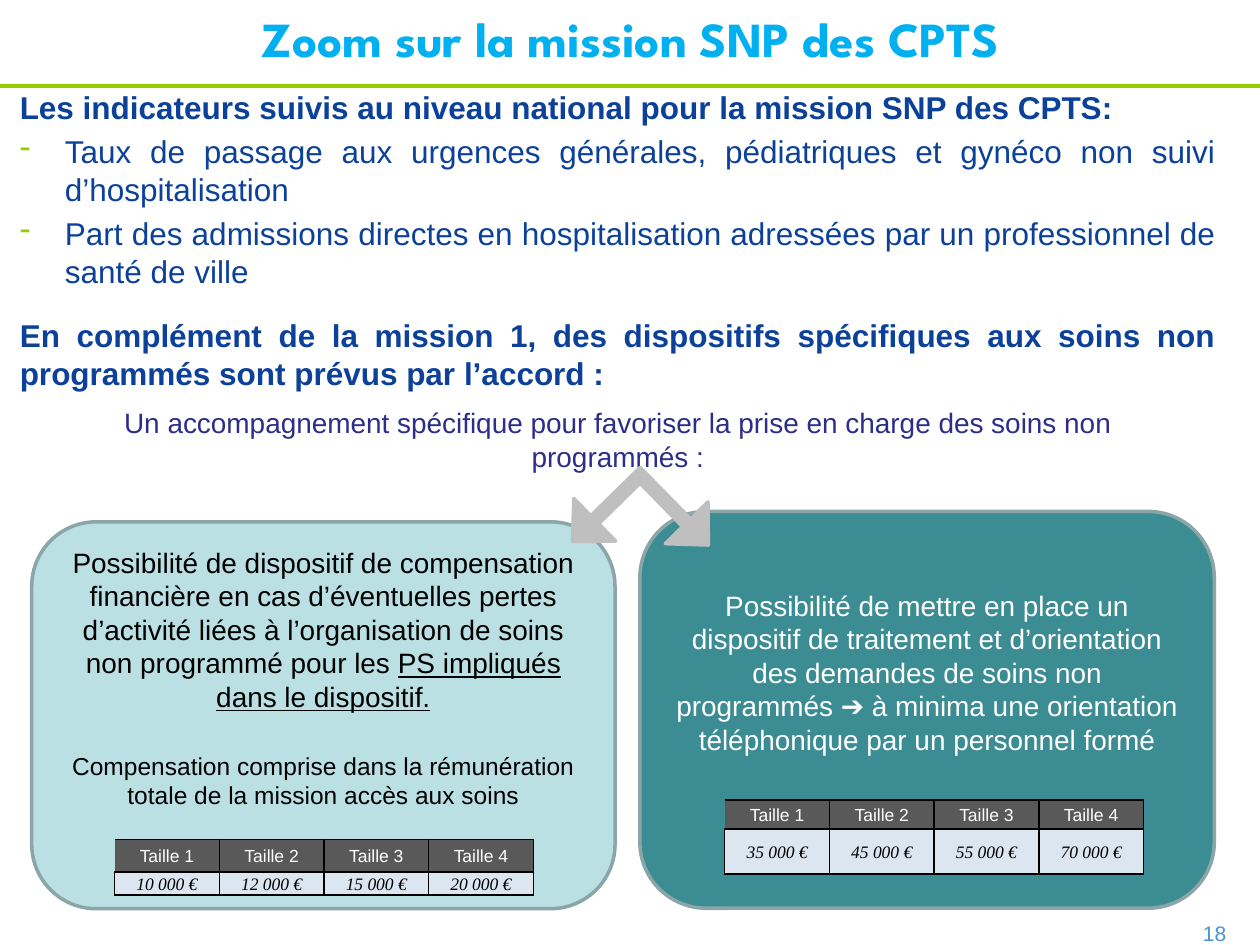
from lxml.etree import SubElement
from pptx import Presentation
from pptx.dml.color import RGBColor
from pptx.enum.shapes import MSO_CONNECTOR, MSO_SHAPE
from pptx.enum.text import MSO_ANCHOR, PP_ALIGN
from pptx.oxml.ns import qn
from pptx.util import Cm, Pt

NAVY, GREEN, GREY_EDGE = "0C419A", "99CC00", "8AA6A8"
CENTER, JUSTIFY = PP_ALIGN.CENTER, PP_ALIGN.JUSTIFY

TITLE = [dict(runs=["Zoom sur la mission SNP des CPTS"], size=28,
              font="League Spartan", color="00B0F0", bold=True)]
INDICATORS = [
    dict(runs=["Les indicateurs suivis au niveau national pour la mission SNP des CPTS:"],
         bold=True),
    dict(runs=["Taux de passage aux urgences générales, pédiatriques et gynéco non suivi "
               "d’hospitalisation"], bullet="-", before=3.6),
    dict(runs=["Part des admissions directes en hospitalisation adressées par un "
               "professionnel de santé de ville"], bullet="-", before=3.6),
    dict(runs=["En complément de la mission 1, des dispositifs spécifiques aux soins non "
               "programmés sont prévus par l’accord :"], bold=True, before=15),
]
for item in INDICATORS:
    item.update(size=18, color=NAVY, align=JUSTIFY)

SUPPORT = [dict(runs=["Un accompagnement spécifique pour favoriser la prise en charge des "
                      "soins non programmés :"], color="2D2D8A")]
COMPENSATION = [
    dict(runs=["Possibilité de dispositif de compensation financière en cas d’éventuelles "
               "pertes d’activité liées à l’organisation de soins non programmé pour les ",
               ("PS impliqués dans le dispositif.",)]),
    dict(runs=["Compensation comprise dans la rémunération totale de la mission accès aux "
               "soins"], size=14, before=21.6),
]
ORIENTATION = [dict(runs=["Possibilité de mettre en place un dispositif de traitement et "
                          "d’orientation des demandes de soins non programmés ➔ à minima une "
                          "orientation téléphonique par un personnel formé"], color="FFFFFF")]

# position, fill, outline, shape, anchor, bottom inset, paragraphs
PANELS = [
    ((1.75, 8.05, 21.41, 2.49), "FFFFFF", "FFFFFF", MSO_SHAPE.RECTANGLE,
     MSO_ANCHOR.TOP, 0.13, SUPPORT),
    ((0.64, 10.52, 11.76, 7.8), "BBE0E3", GREY_EDGE, MSO_SHAPE.ROUNDED_RECTANGLE,
     MSO_ANCHOR.MIDDLE, 1.65, COMPENSATION),
    ((12.9, 10.31, 11.58, 8), "3C8C93", GREY_EDGE, MSO_SHAPE.ROUNDED_RECTANGLE,
     MSO_ANCHOR.MIDDLE, 1.65, ORIENTATION),
]
SIZES = ["Taille 1", "Taille 2", "Taille 3", "Taille 4"]
# left, top, row heights, amounts
TABLES = [
    (14.61, 16.13, (0.58, 0.91), ["35 000 €", "45 000 €", "55 000 €", "70 000 €"]),
    (2.31, 16.92, (0.66, 0.46), ["10 000 €", "12 000 €", "15 000 €", "20 000 €"]),
]
COLUMN = 2.11
ROW_STYLES = [
    dict(fill="595959", color="FFFFFF", font="Arial", italic=False),
    dict(fill="DCE6F1", color="000000", font="Times New Roman", italic=True),
]


def rgb(value):
    return RGBColor.from_string(value)


def box(values):
    return [Cm(v) for v in values]


def style(font, size, color, **formats):
    font.size, font.color.rgb = Pt(size), rgb(color)
    for key, value in formats.items():
        setattr(font, key, value)


def add_bullet(p, char):
    pPr = p._p.get_or_add_pPr()
    pPr.set("marL", str(Cm(0.91)))
    pPr.set("indent", str(-Cm(0.91)))
    color = SubElement(pPr, qn("a:buClr"))
    SubElement(color, qn("a:srgbClr"), val=GREEN)
    SubElement(pPr, qn("a:buChar"), char=char)


def write(tf, paragraphs, anchor=MSO_ANCHOR.TOP, bottom=0.13):
    """Fill a text frame; a run given as a tuple is underlined."""
    tf.word_wrap, tf.vertical_anchor, tf.margin_bottom = True, anchor, Cm(bottom)
    for i, item in enumerate(paragraphs):
        p = tf.paragraphs[0] if i == 0 else tf.add_paragraph()
        p.alignment = item.get("align", CENTER)
        if "before" in item:
            p.space_before = Pt(item["before"])
        if "bullet" in item:
            add_bullet(p, item["bullet"])
        for run in item["runs"]:
            underlined = isinstance(run, tuple)
            r = p.add_run()
            r.text = run[0] if underlined else run
            style(r.font, item.get("size", 16), item.get("color", "000000"),
                  name=item.get("font", "Arial"), bold=item.get("bold", False),
                  underline=underlined)


def add_panel(slide, kind, position, fill, edge):
    s = slide.shapes.add_shape(kind, *box(position))
    s.shadow.inherit = False
    s.fill.solid()
    s.fill.fore_color.rgb = rgb(fill)
    s.line.color.rgb, s.line.width = rgb(edge), Pt(2)
    return s


def add_borders(cell, hidden=()):
    tcPr = cell._tc.get_or_add_tcPr()
    for side in ("lnL", "lnR", "lnT", "lnB"):
        ln = SubElement(tcPr, qn(f"a:{side}"), w=str(Pt(1)))
        if side in hidden:
            SubElement(ln, qn("a:noFill"))
        else:
            SubElement(SubElement(ln, qn("a:solidFill")), qn("a:srgbClr"), val="000000")


def add_amounts(slide, left, top, heights, amounts):
    frame = slide.shapes.add_table(2, len(SIZES), *box(
        (left, top, COLUMN * len(SIZES), sum(heights))))
    table = frame.table
    table.first_row = table.horz_banding = False
    for column in table.columns:
        column.width = Cm(COLUMN)
    for i, (height, texts, look) in enumerate(zip(heights, (SIZES, amounts), ROW_STYLES)):
        table.rows[i].height = Cm(height)
        for j, text in enumerate(texts):
            cell = table.cell(i, j)
            add_borders(cell, ("lnL",) if i == j == 0 else ())
            cell.fill.solid()
            cell.fill.fore_color.rgb = rgb(look["fill"])
            cell.vertical_anchor = MSO_ANCHOR.MIDDLE
            cell.margin_left = cell.margin_right = cell.margin_top = Cm(0.03)
            cell.margin_bottom = 0
            p = cell.text_frame.paragraphs[0]
            p.alignment = CENTER
            r = p.add_run()
            r.text = text
            style(r.font, 10, look["color"], name=look["font"], italic=look["italic"])


def main():
    prs = Presentation()
    prs.slide_width, prs.slide_height = Cm(25.4), Cm(19.05)
    slide = prs.slides.add_slide(prs.slide_layouts[6])

    rule = slide.shapes.add_connector(MSO_CONNECTOR.STRAIGHT, *box((0, 1.73, 25.4, 1.73)))
    rule.line.color.rgb, rule.line.width = rgb(GREEN), Pt(2.25)
    SubElement(rule._element.spPr, qn("a:effectLst"))

    page = [dict(runs=["18"], size=12, color="4993D7", align=PP_ALIGN.LEFT)]
    for position, paragraphs, anchor in [
        ((0.15, 1.65, 24.61, 16.3), INDICATORS, MSO_ANCHOR.TOP),
        ((24, 18.44, 1.4, 0.61), page, MSO_ANCHOR.TOP),
        ((0, 0, 25.4, 1.55), TITLE, MSO_ANCHOR.MIDDLE),
    ]:
        write(slide.shapes.add_textbox(*box(position)).text_frame, paragraphs, anchor)

    for position, fill, edge, kind, anchor, bottom, paragraphs in PANELS:
        s = add_panel(slide, kind, position, fill, edge)
        write(s.text_frame, paragraphs, anchor, bottom)

    arrow = add_panel(slide, MSO_SHAPE.LEFT_UP_ARROW, (11.63, 9.27, 2.57, 2.51),
                      "BFBFBF", "BFBFBF")
    arrow.rotation = 225.6
    for i, value in enumerate((0.09, 0.24, 0.25)):
        arrow.adjustments[i] = value

    for table in TABLES:
        add_amounts(slide, *table)
    prs.save("out.pptx")


if __name__ == "__main__":
    main()
